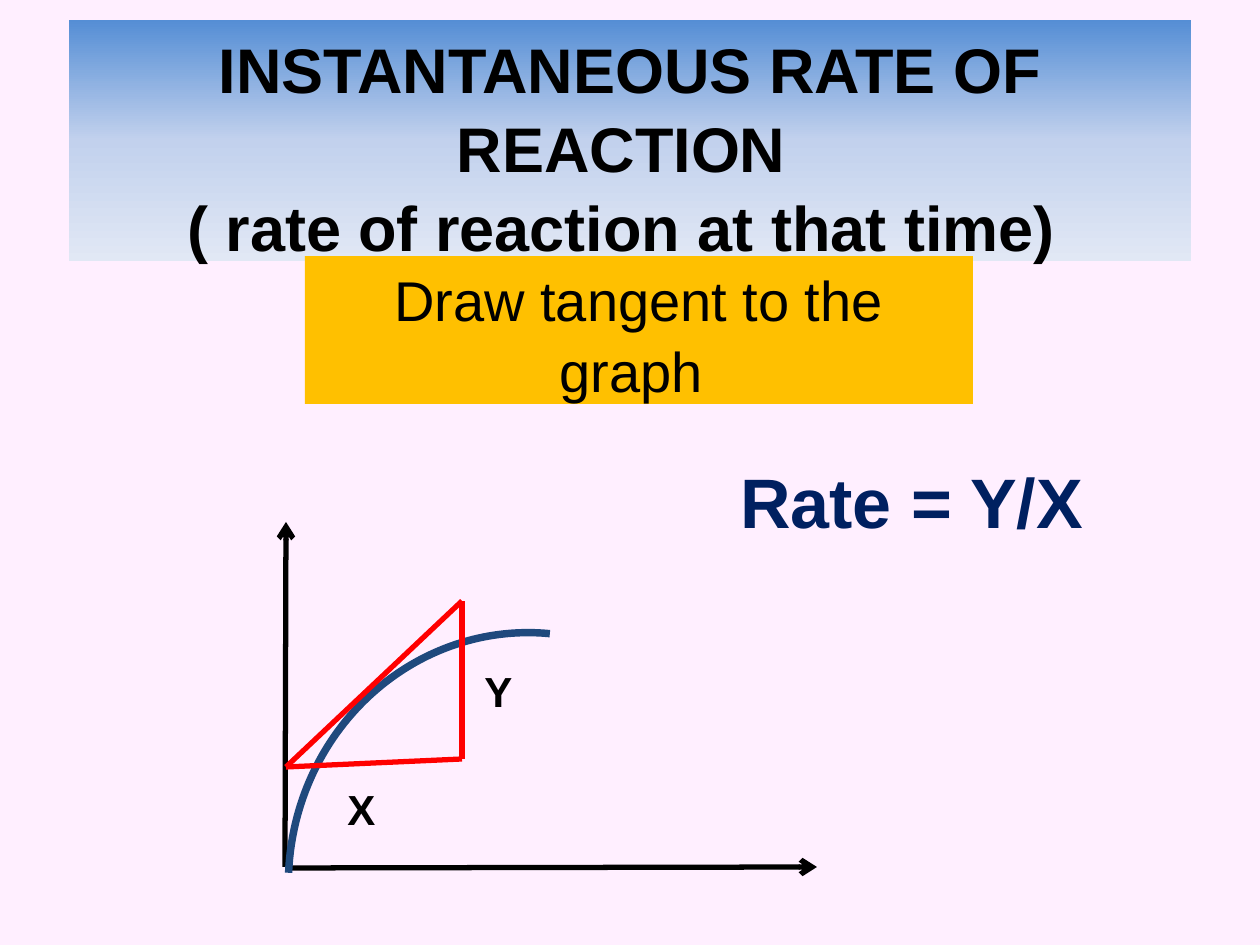
import copy

import pptx
import pptx.dml.color
import pptx.enum.shapes
import pptx.enum.text
import pptx.oxml.ns
import pptx.util
from lxml import etree

SCALE = 914400 / 126
FONT = "Arial"
BLACK = "000000"
RED = "FF0000"


def px(length):
    """Turn a length in px into EMU."""
    return pptx.util.Emu(round(length * SCALE))


def color(hex_code):
    """Turn a hex string into a colour."""
    return pptx.dml.color.RGBColor.from_string(hex_code)


def place(shape, box):
    """Move and size a shape to a box of left, top, width, height."""
    shape.left, shape.top, shape.width, shape.height = map(px, box)


def write(shape, lines, size, hex_code=BLACK, bold=False, centred=False, spacing=1.0):
    """Fill a shape with one paragraph for each line."""
    frame = shape.text_frame
    frame.text = "\n".join(lines)
    frame.word_wrap = True
    frame.auto_size = pptx.enum.text.MSO_AUTO_SIZE.NONE
    frame.vertical_anchor = pptx.enum.text.MSO_ANCHOR.TOP
    align = pptx.enum.text.PP_ALIGN
    for paragraph in frame.paragraphs:
        paragraph.alignment = align.CENTER if centred else align.LEFT
        paragraph.line_spacing = spacing
        paragraph.space_before = pptx.util.Pt(0)
        paragraph.font.name = FONT
        paragraph.font.size = pptx.util.Pt(size)
        paragraph.font.bold = bold
        paragraph.font.color.rgb = color(hex_code)


def add_heading(slide, box):
    """Format the title placeholder as a gradient banner."""
    heading = slide.shapes.title
    place(heading, box)
    heading.fill.gradient()
    heading.fill.gradient_angle = 270
    stop_list = heading._element.spPr.find(".//" + pptx.oxml.ns.qn("a:gsLst"))
    stop_list.append(copy.deepcopy(stop_list[0]))
    shades = [(0, "558ED5"), (0.5, "C2D1ED"), (1, "E1E8F5")]
    for stop, (position, shade) in zip(heading.fill.gradient_stops, shades):
        stop.position = position
        stop.color.rgb = color(shade)
    lines = ["INSTANTANEOUS RATE OF REACTION ", "( rate of reaction at that time) "]
    write(heading, lines, 36, bold=True, centred=True, spacing=1.05)


def add_instruction(slide, box):
    """Add the yellow box that says what to draw."""
    instruction = slide.shapes.add_shape(
        pptx.enum.shapes.MSO_SHAPE.RECTANGLE, *map(px, box))
    instruction.shadow.inherit = False
    instruction.fill.solid()
    instruction.fill.fore_color.rgb = color("FFC000")
    instruction.line.fill.background()
    write(instruction, ["Draw tangent to the graph "], 32, centred=True, spacing=1.05)


def add_label(slide, box, wording, size, hex_code=BLACK):
    """Add a bold label."""
    label = slide.shapes.add_textbox(*map(px, box))
    write(label, [wording], size, hex_code, bold=True)


def add_line(slide, start, end, hex_code, arrow=False):
    """Add a straight line, with an arrowhead at its end if asked."""
    line = slide.shapes.add_connector(
        pptx.enum.shapes.MSO_CONNECTOR.STRAIGHT, *map(px, start + end))
    line.line.color.rgb = color(hex_code)
    line.line.width = pptx.util.Pt(3)
    qn = pptx.oxml.ns.qn
    if arrow:
        etree.SubElement(line.line._get_or_add_ln(), qn("a:tailEnd"), type="arrow")
    etree.SubElement(line._element.spPr, qn("a:effectLst"))


def add_graph(slide, box):
    """Draw the axes, the curve and its tangent triangle inside a box."""
    left, top, width, height = box
    bottom = top + height
    add_line(slide, (left, bottom - 1), (left + 1, top), BLACK, arrow=True)
    add_line(slide, (left + 1, bottom), (left + width, bottom - 1), BLACK, arrow=True)

    curve = slide.shapes.add_shape(
        pptx.enum.shapes.MSO_SHAPE.ARC,
        *map(px, (left - 8, top + 122, 498, 475)))
    curve.shadow.inherit = False
    curve.adjustments[0] = 159.97
    curve.adjustments[1] = 0
    curve.rotation = 275.5
    curve.fill.background()
    curve.line.color.rgb = color("1F497D")
    curve.line.width = pptx.util.Pt(4.25)

    contact = (left + 1, top + 245)
    peak = (left + 177, top + 79)
    corner = (left + 177, top + 237)
    for start, end in ((contact, peak), (corner, peak), (contact, corner)):
        add_line(slide, start, end, RED)
    add_label(slide, (left + 187, top + 137, 108, 64), "Y", 24)
    add_label(slide, (left + 50, top + 255, 108, 64), "X", 24)


def main():
    """Build the slide and save it."""
    deck = pptx.Presentation()
    deck.slide_width, deck.slide_height = px(1260), px(945)
    slide = deck.slides.add_slide(deck.slide_layouts[5])
    slide.background.fill.solid()
    slide.background.fill.fore_color.rgb = color("FFEFFF")
    add_heading(slide, (69, 20, 1122, 241))
    add_instruction(slide, (305, 256, 668, 148))
    add_graph(slide, (285, 522, 532, 346))
    add_label(slide, (728, 452, 444, 97), "Rate = Y/X", 40, "002060")
    deck.save("out.pptx")


if __name__ == "__main__":
    main()
